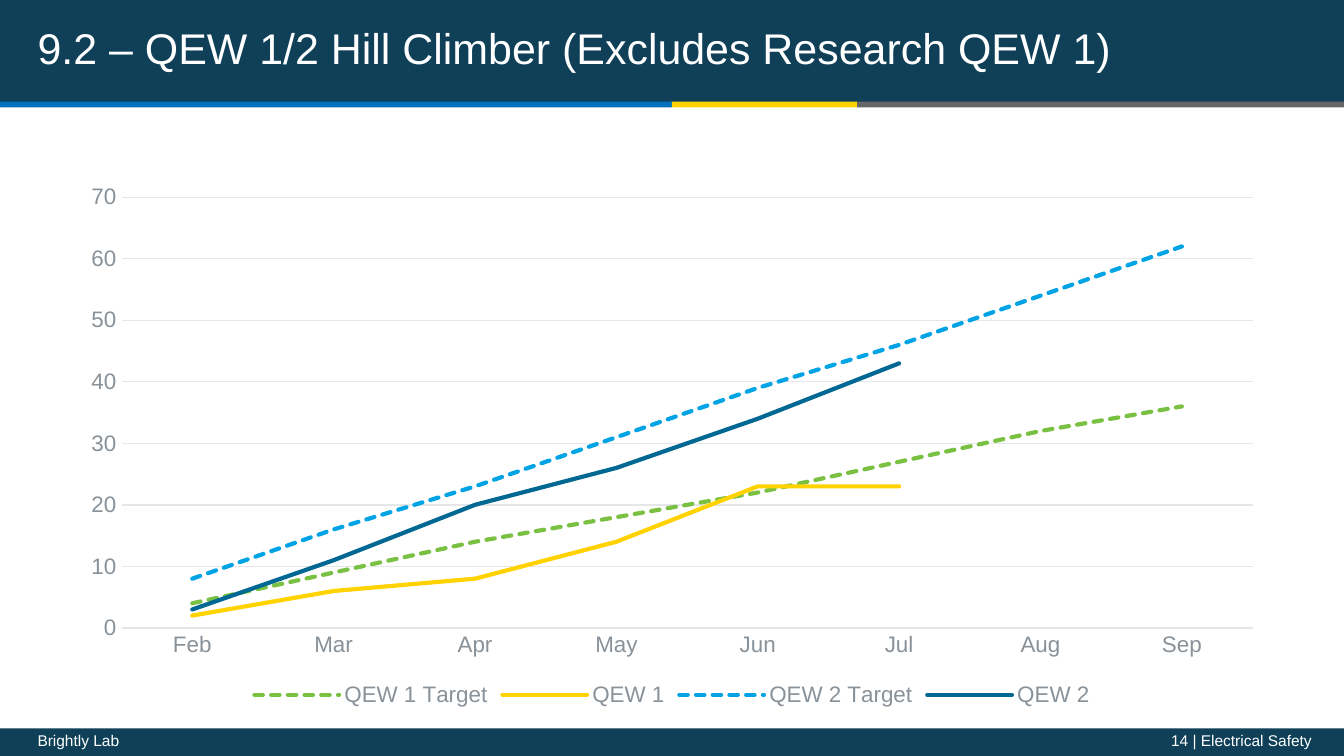
import pptx
import pptx.chart.data
import pptx.dml.color
import pptx.enum.chart
import pptx.enum.dml
import pptx.enum.shapes
import pptx.enum.text
import pptx.util
from pptx.util import Cm, Pt

RGBColor = pptx.dml.color.RGBColor
PP_ALIGN = pptx.enum.text.PP_ALIGN
MSO_LINE = pptx.enum.dml.MSO_LINE

NAVY = RGBColor(0x0F, 0x40, 0x58)
BLUE = RGBColor(0x00, 0x71, 0xBC)
YELLOW = RGBColor(0xFF, 0xD2, 0x00)
GRAY = RGBColor(0x66, 0x66, 0x66)
WHITE = RGBColor(0xFF, 0xFF, 0xFF)
GREEN = RGBColor(0x7A, 0xC1, 0x43)
SKY = RGBColor(0x00, 0xA4, 0xE4)
TEAL = RGBColor(0x00, 0x68, 0x92)
LABEL_GRAY = RGBColor(0x89, 0x91, 0x99)
GRID_GRAY = RGBColor(0xE4, 0xE6, 0xE7)
TEXT_GRAY = RGBColor(0x50, 0x56, 0x5C)
FONT = "Arial"


def style_font(font, size, color):
    font.name = FONT
    font.size = Pt(size)
    font.color.rgb = color


def set_insets(frame):
    frame.margin_left = frame.margin_right = Cm(0.23)
    frame.margin_top = frame.margin_bottom = Cm(0.1)
    frame.word_wrap = True
    frame.auto_size = pptx.enum.text.MSO_AUTO_SIZE.NONE


deck = pptx.Presentation()
deck.slide_width = Cm(25.4)
deck.slide_height = Cm(14.29)
page = deck.slides.add_slide(deck.slide_layouts[5])

# Header, footer and the three-colour rule under the header
bands = [
    (0, 0, 25.4, 1.93, NAVY),
    (0, 13.77, 25.4, 0.52, NAVY),
    (0, 1.92, 12.7, 0.11, BLUE),
    (12.7, 1.92, 3.5, 0.11, YELLOW),
    (16.2, 1.92, 9.2, 0.11, GRAY),
]
for left, top, width, height, color in bands:
    band = page.shapes.add_shape(
        pptx.enum.shapes.MSO_SHAPE.RECTANGLE,
        Cm(left), Cm(top), Cm(width), Cm(height))
    band.shadow.inherit = False
    band.fill.solid()
    band.fill.fore_color.rgb = color
    band.line.fill.background()

footers = [
    ("Brightly Lab", 0.48, 3.78, PP_ALIGN.LEFT),
    ("14 | Electrical Safety", 21.84, 3.18, PP_ALIGN.RIGHT),
]
for text, left, width, alignment in footers:
    box = page.shapes.add_textbox(Cm(left), Cm(13.79), Cm(width), Cm(0.5))
    set_insets(box.text_frame)
    para = box.text_frame.paragraphs[0]
    para.text = text
    para.alignment = alignment
    para.line_spacing = 0.8
    style_font(para.font, 8.3, WHITE)

# Title, brought in front of the header band
title = page.shapes.title
page.shapes._spTree.append(title._element)
title.left, title.top = Cm(0.48), Cm(0)
title.width, title.height = Cm(21.21), Cm(1.88)
set_insets(title.text_frame)
title.text_frame.vertical_anchor = pptx.enum.text.MSO_ANCHOR.MIDDLE
para = title.text_frame.paragraphs[0]
para.text = "9.2 – QEW 1/2 Hill Climber (Excludes Research QEW 1)"
para.alignment = PP_ALIGN.LEFT
para.line_spacing = Pt(25)
style_font(para.font, 23, WHITE)

# Progress against target by month
lines = [
    ("QEW 1 Target", [4, 9, 14, 18, 22, 27, 32, 36], GREEN, True),
    ("QEW 1", [2, 6, 8, 14, 23, 23, None, None], YELLOW, False),
    ("QEW 2 Target", [8, 16, 23, 31, 39, 46, 54, 62], SKY, True),
    ("QEW 2", [3, 11, 20, 26, 34, 43, None, None], TEAL, False),
]
data = pptx.chart.data.CategoryChartData()
data.categories = ["Feb", "Mar", "Apr", "May", "Jun", "Jul", "Aug", "Sep"]
for name, values, color, dashed in lines:
    data.add_series(name, values)
chart = page.shapes.add_chart(
    pptx.enum.chart.XL_CHART_TYPE.LINE,
    Cm(1.27), Cm(3.3), Cm(22.86), Cm(10.16), data).chart
chart.has_title = False
style_font(chart.font, 10, TEXT_GRAY)
chart.plots[0].vary_by_categories = False

for series, (name, values, color, dashed) in zip(chart.plots[0].series, lines):
    series.smooth = False
    line = series.format.line
    line.color.rgb = color
    line.width = Pt(2.25)
    if dashed:
        line.dash_style = MSO_LINE.SQUARE_DOT
    line._get_or_add_ln().set("cap", "rnd")

for axis in (chart.category_axis, chart.value_axis):
    axis.major_tick_mark = pptx.enum.chart.XL_TICK_MARK.NONE
    axis.minor_tick_mark = pptx.enum.chart.XL_TICK_MARK.NONE
    style_font(axis.tick_labels.font, 12, LABEL_GRAY)
chart.value_axis.minimum_scale = 0
chart.value_axis.maximum_scale = 70
chart.value_axis.major_unit = 10
chart.value_axis.has_major_gridlines = True
chart.value_axis.format.line.fill.background()
for line in (chart.category_axis.format.line,
             chart.value_axis.major_gridlines.format.line):
    line.color.rgb = GRID_GRAY
    line.width = Pt(0.75)

chart.has_legend = True
chart.legend.position = pptx.enum.chart.XL_LEGEND_POSITION.BOTTOM
chart.legend.include_in_layout = False
style_font(chart.legend.font, 12, LABEL_GRAY)

deck.save("out.pptx")
